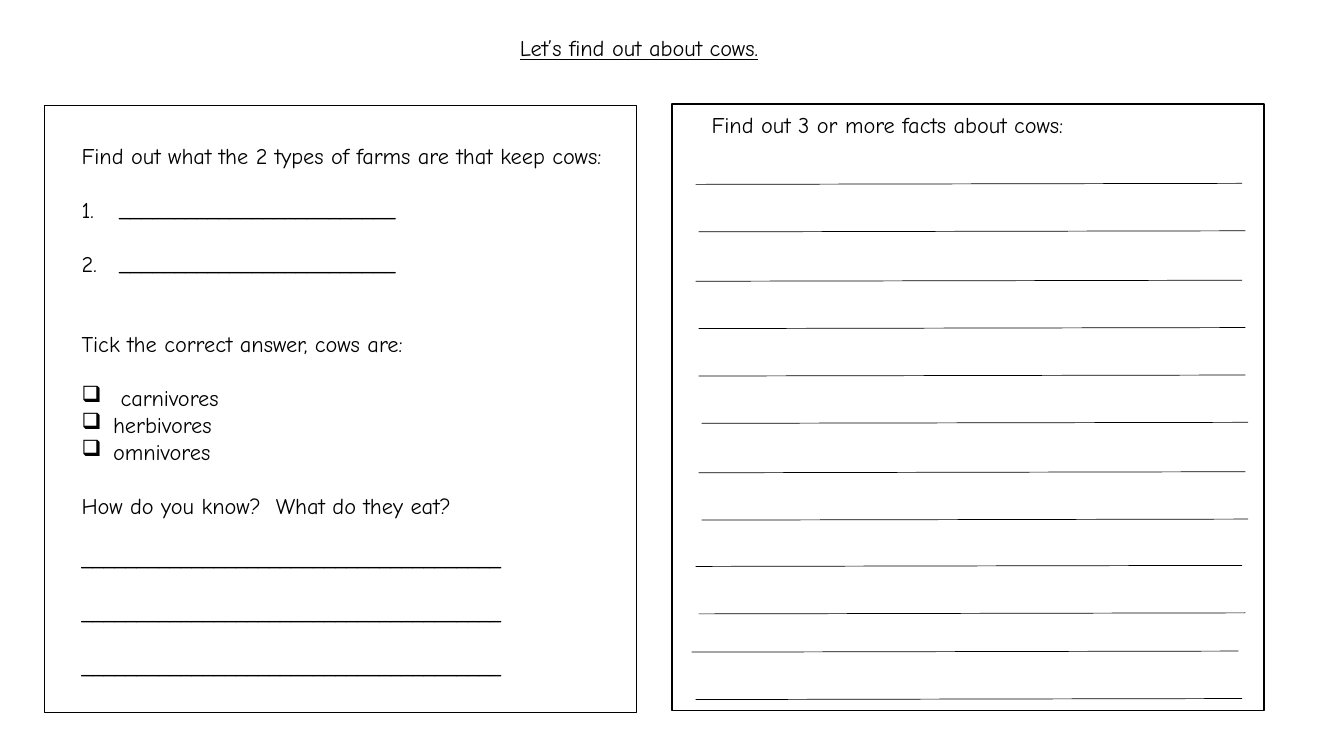
"""Build a one-slide worksheet for finding out facts about cows."""
from lxml import etree
from pptx import Presentation
from pptx.dml.color import RGBColor
from pptx.enum.shapes import MSO_CONNECTOR, MSO_SHAPE
from pptx.oxml.ns import qn
from pptx.util import Pt

RECTANGLE = MSO_SHAPE.RECTANGLE
STRAIGHT = MSO_CONNECTOR.STRAIGHT
COLORS = {"ink": "000000"}
FONT = "Comic Neue"
TEXT_SIZE = 16
LINE_HEIGHT = 19.2
RULE_WIDTH = 390.5
RULE_RISE = 0.72

FARM_BLANK = "_" * 25
ANSWER_BLANK = "_" * 38
NUMBER = ("buAutoNum", {"type": "arabicPeriod"}, 27)
TICK_BOX = ("buChar", {"char": "❑"}, 22.5)

# Each entry: text, empty lines above, list marker
QUESTIONS = [
    ("Find out what the 2 types of farms are that keep cows:", 0, None),
    (FARM_BLANK, 1, NUMBER),
    (FARM_BLANK, 1, NUMBER),
    ("Tick the correct answer, cows are:", 2, None),
    (" carnivores", 1, TICK_BOX),
    ("herbivores", 0, TICK_BOX),
    ("omnivores", 0, TICK_BOX),
    ("How do you know?  What do they eat?", 1, None),
    (ANSWER_BLANK, 1, None),
    (ANSWER_BLANK, 1, None),
    (ANSWER_BLANK, 1, None),
]

# Each entry: left end, height of the left end
WRITING_RULES = [
    (496.8, 131.7), (499, 165.6), (496.8, 200.9), (499, 234.7),
    (499, 268.6), (501.1, 302.4), (499, 337.7), (501.1, 371.5),
    (496.8, 404.6), (499, 438.5), (494, 465.8), (496.8, 499.7),
]


def ink():
    """Return the ink colour."""
    return RGBColor.from_string(COLORS["ink"])


def add_frame(slide, left, top, width, height):
    """Add an unfilled box with a thin outline."""
    shape = slide.shapes.add_shape(RECTANGLE, Pt(left), Pt(top), Pt(width), Pt(height))
    shape.shadow.inherit = False
    shape.fill.background()
    shape.line.color.rgb = ink()
    shape.line.width = Pt(1)


def set_marker(paragraph, marker):
    """Give a paragraph a hanging list marker."""
    tag, attributes, indent = marker
    properties = paragraph._p.get_or_add_pPr()
    properties.set("marL", str(Pt(indent)))
    properties.set("indent", str(-Pt(indent)))
    etree.SubElement(properties, qn(f"a:{tag}"), attributes)


def add_text(slide, left, top, width, height, entries, underline=None):
    """Add a text box with one paragraph per entry."""
    box = slide.shapes.add_textbox(Pt(left), Pt(top), Pt(width), Pt(height))
    text_frame = box.text_frame
    text_frame.word_wrap = True
    for index, (text, lines_above, marker) in enumerate(entries):
        paragraph = text_frame.add_paragraph() if index else text_frame.paragraphs[0]
        paragraph.text = text
        if marker:
            set_marker(paragraph, marker)
        if lines_above:
            paragraph.space_before = Pt(lines_above * LINE_HEIGHT)
        for run in paragraph.runs:
            run.font.name = FONT
            run.font.size = Pt(TEXT_SIZE)
            run.font.underline = underline
            run.font.color.rgb = ink()


def add_rule(slide, left, top):
    """Add a slightly rising writing line."""
    rule = slide.shapes.add_connector(
        STRAIGHT, Pt(left), Pt(top), Pt(left + RULE_WIDTH), Pt(top - RULE_RISE))
    rule.line.color.rgb = ink()
    rule.line.width = Pt(0.5)
    etree.SubElement(rule._element.spPr, qn("a:effectLst"))


def main():
    """Build and save the worksheet."""
    presentation = Presentation()
    presentation.slide_width = Pt(960)
    presentation.slide_height = Pt(540)
    slide = presentation.slides.add_slide(presentation.slide_layouts[6])
    add_frame(slide, 31.8, 75.5, 423, 433.5)
    add_text(slide, 501.2, 75.5, 402, 46, [("Find out 3 or more facts about cows:", 0, None)])
    add_text(slide, 364.3, 21, 590, 26.5, [("Let’s find out about cows.", 0, None)], True)
    add_frame(slide, 480, 74.2, 423, 433.5)
    add_text(slide, 51.2, 98.2, 402, 415, QUESTIONS)
    for left, top in WRITING_RULES:
        add_rule(slide, left, top)
    presentation.save("out.pptx")


if __name__ == "__main__":
    main()
